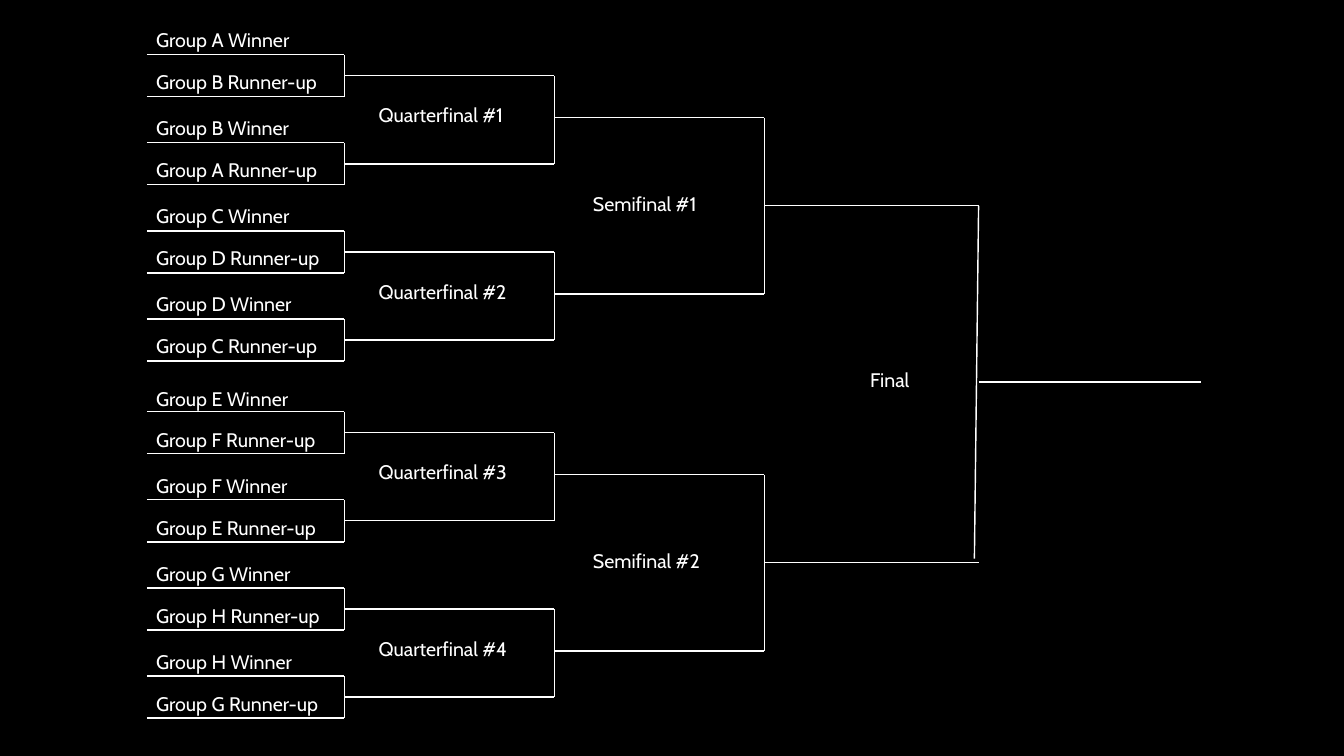
import pptx
import pptx.util
import pptx.dml.color
import pptx.enum.shapes
import pptx.enum.text
import lxml.etree

Pt = pptx.util.Pt
RGB = pptx.dml.color.RGBColor

COLORS = {"back": "000000", "ink": "FFFFFF"}
FONT, SIZE = "Cabin", 28

# Each half of the draw: group pairs as (winner, runner-up)
HALVES = [
    {"top": 78, "label": 36.7, "pairs": ["AB", "BA", "CD", "DC"]},
    {"top": 588, "label": 548.6, "pairs": ["EF", "FE", "GH", "HG"]},
]

# Left edge of each round, then the end of the last line
ROUNDS = [210, 492, 792, 1092, 1398, 1716]
MATCH = 126                    # step between first-round matches
SLOT = 60                      # winner line to runner-up line
MIDS = [30, 90, 216]           # outgoing line of each round, below the half's top
LABEL_STEP, LABEL_SLOT = 125.5, 59.8
BOX = (258, 41)

deck = pptx.Presentation()
deck.slide_width, deck.slide_height = Pt(1920), Pt(1080)
slide = deck.slides.add_slide(deck.slide_layouts[6])
slide.background.fill.solid()
slide.background.fill.fore_color.rgb = RGB.from_string(COLORS["back"])


def line(shapes, x1, y1, x2, y2):
    link = shapes.add_connector(
        pptx.enum.shapes.MSO_CONNECTOR.STRAIGHT, Pt(x1), Pt(y1), Pt(x2), Pt(y2))
    link.line.color.rgb = RGB.from_string(COLORS["ink"])
    link.line.width = Pt(2)
    lxml.etree.SubElement(link._element.spPr, pptx.oxml.ns.qn("a:effectLst"))


def label(text, x, y):
    frame = slide.shapes.add_textbox(Pt(x), Pt(y), Pt(BOX[0]), Pt(BOX[1])).text_frame
    frame.word_wrap = True
    frame.auto_size = pptx.enum.text.MSO_AUTO_SIZE.SHAPE_TO_FIT_TEXT
    para = frame.paragraphs[0]
    para.text = text
    para.font.name = FONT
    para.font.size = Pt(SIZE)
    para.font.color.rgb = RGB.from_string(COLORS["ink"])


def fork(shapes, level, high, low):
    """Draw two incoming lines of a round and the bar that joins them."""
    left, right = ROUNDS[level:level + 2]
    line(shapes, left, high, right, high)
    line(shapes, left, low, right, low)
    line(shapes, right, high, right, low)


def bracket(top):
    shapes = slide.shapes.add_group_shape().shapes
    for match in range(4):
        high = top + match * MATCH
        fork(shapes, 0, high, high + SLOT)
    for pair in range(2):
        high = top + MIDS[0] + pair * 2 * MATCH
        fork(shapes, 1, high, high + MATCH)
    high = top + MIDS[1]
    fork(shapes, 2, high, high + 2 * MATCH)
    line(shapes, ROUNDS[3], top + MIDS[2], ROUNDS[4], top + MIDS[2])


for half in HALVES:
    bracket(half["top"])

# The final's bar leans slightly to the left
line(slide.shapes, ROUNDS[4], 294, 1392, 798)
line(slide.shapes, ROUNDS[4], 546, ROUNDS[5], 546)

for number, half in enumerate(HALVES):
    for match, (first, second) in enumerate(half["pairs"]):
        y = half["label"] + match * LABEL_STEP
        label(f"Group {first} Winner", 216, y)
        label(f"Group {second} Runner-up", 216, y + LABEL_SLOT)
    for pair in range(2):
        label(f"Quarterfinal #{2 * number + pair + 1}", 534,
              half["top"] + 66 + pair * 2 * MATCH)
    label(f"Semifinal #{number + 1}", 840, half["top"] + 193)
label("Final", 1236, 522.7)

deck.save("out.pptx")
